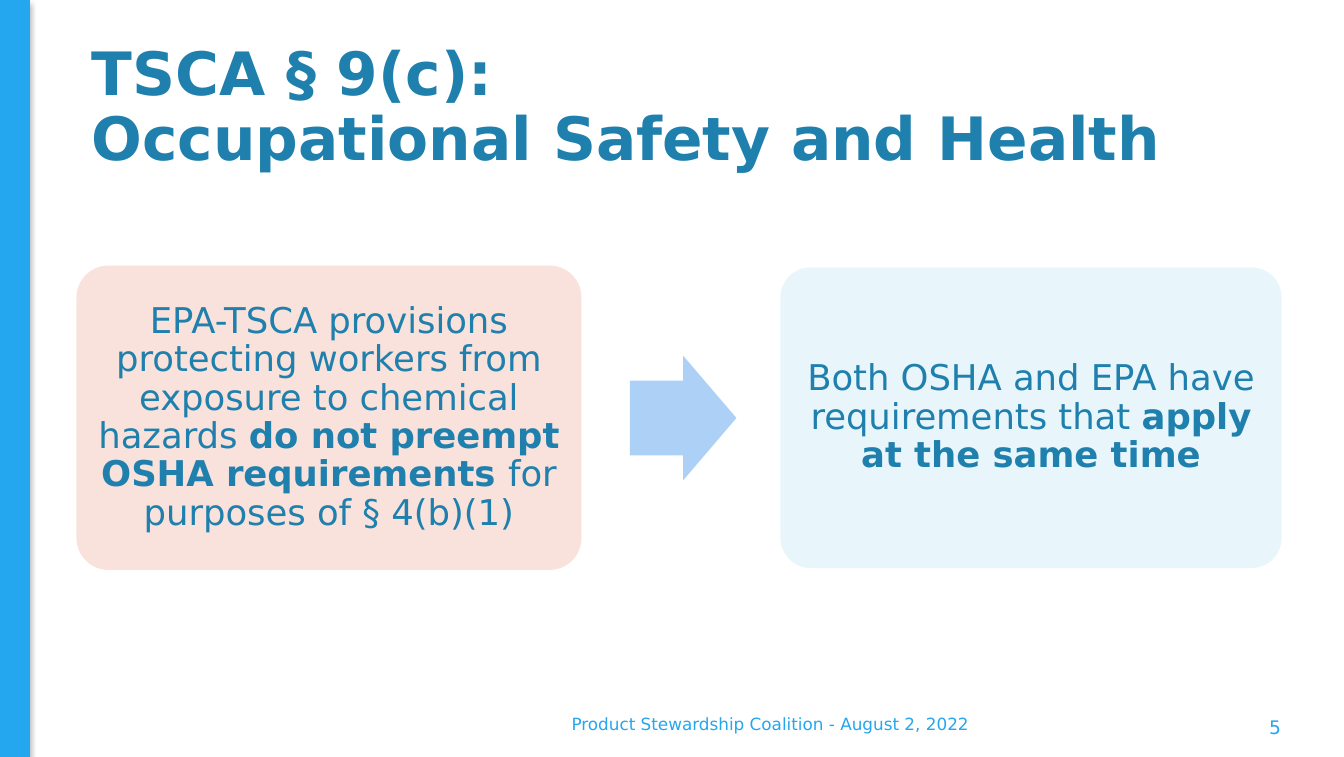
from lxml.etree import SubElement as Sub
from pptx import Presentation
from pptx.dml.color import RGBColor as Rgb
from pptx.enum.shapes import MSO_SHAPE as Kind
from pptx.enum.text import MSO_ANCHOR as Anchor, PP_ALIGN as Align
from pptx.oxml.ns import qn
from pptx.util import Pt

FONT = "DejaVu Sans"
TEAL, BLUE = "1F80AE", "24A7EF"
WIDE, HIGH = 720, 405.36


def paint(form, color):
    """Set a fill or font colour from a hex string."""
    if hasattr(form, "solid"):
        form.solid()
        form.fore_color.rgb = Rgb.from_string(color)
    else:
        form.color.rgb = Rgb.from_string(color)


def style(run, size, color, bold=False):
    """Format one run."""
    run.font.name, run.font.size, run.font.bold = FONT, Pt(size), bold
    paint(run.font, color)


def shape(slide, kind, area, color):
    """Add a flat filled preset shape."""
    item = slide.shapes.add_shape(kind, *map(Pt, area))
    item.shadow.inherit = False
    paint(item.fill, color)
    item.line.fill.background()
    return item


def shade(item):
    """Give a shape a soft dark shadow."""
    effects = item.element.spPr.find(qn("a:effectLst"))
    outer = Sub(effects, qn("a:outerShdw"), blurRad=str(Pt(3.1)),
                dist=str(Pt(1.8)), dir="5400000", rotWithShape="0")
    tint = Sub(outer, qn("a:srgbClr"), val="000000")
    Sub(tint, qn("a:alpha"), val="35000")


def fade(item, share):
    """Make a solid fill partly transparent."""
    tint = item.element.spPr.find(qn("a:solidFill"))[0]
    Sub(tint, qn("a:alpha"), val=str(share * 1000))


def label(slide, area, text, size, color, align=Align.LEFT, bold=False, gap=1.0):
    """Add a wrapped, vertically centred text box."""
    frame = slide.shapes.add_textbox(*map(Pt, area)).text_frame
    frame.word_wrap, frame.vertical_anchor = True, Anchor.MIDDLE
    para = frame.paragraphs[0]
    para.text, para.alignment, para.line_spacing = text, align, gap
    for run in para.runs:
        style(run, size, color, bold)


def card(slide, left, color, parts):
    """Add a rounded card whose odd parts are bold."""
    item = shape(slide, Kind.ROUNDED_RECTANGLE, (left, 143.2, 268.5, 161), color)
    item.adjustments[0] = 0.1
    frame = item.text_frame
    frame.word_wrap, frame.vertical_anchor = True, Anchor.MIDDLE
    frame.margin_left = frame.margin_right = Pt(5.5)
    frame.margin_top = frame.margin_bottom = Pt(5.5)
    para = frame.paragraphs[0]
    para.alignment, para.line_spacing = Align.CENTER, 0.9
    for spot, part in enumerate(parts):
        run = para.add_run()
        run.text = part
        style(run, 19, TEAL, spot % 2 == 1)
    return item


def main():
    """Build the slide and save it."""
    deck = Presentation()
    deck.slide_width, deck.slide_height = Pt(WIDE), Pt(HIGH)
    slide = deck.slides.add_slide(deck.slide_layouts[6])

    shade(shape(slide, Kind.RECTANGLE, (0, 0, 16.1, HIGH), BLUE))
    label(slide, (42, 14.6, 645, 87.2), "TSCA § 9(c): \vOccupational Safety and Health",
          32, TEAL, bold=True, gap=0.9)

    first = card(slide, 42, "F8E2DB", (
        "EPA-TSCA provisions protecting workers from exposure to chemical hazards ",
        "do not preempt OSHA requirements ",
        "for purposes of § 4(b)(1)"))
    paint(first.line.fill, "F8E2DB")
    first.line.width = Pt(2)

    arrow = shape(slide, Kind.RIGHT_ARROW, (337.5, 190.5, 57, 66.7), "ACD0F6")
    arrow.adjustments[0], arrow.adjustments[1] = 0.6, 0.5

    last = card(slide, 418.1, "D2EEFB", (
        "Both OSHA and EPA have requirements that ",
        "apply at the same time"))
    fade(last, 50)

    label(slide, (167, 376.8, 491, 21.6),
          "Product Stewardship Coalition - August 2, 2022", 9, BLUE, Align.CENTER)
    label(slide, (620.6, 382.3, 72.7, 14.4), "5", 10, BLUE, Align.RIGHT)
    deck.save("out.pptx")


if __name__ == "__main__":
    main()
